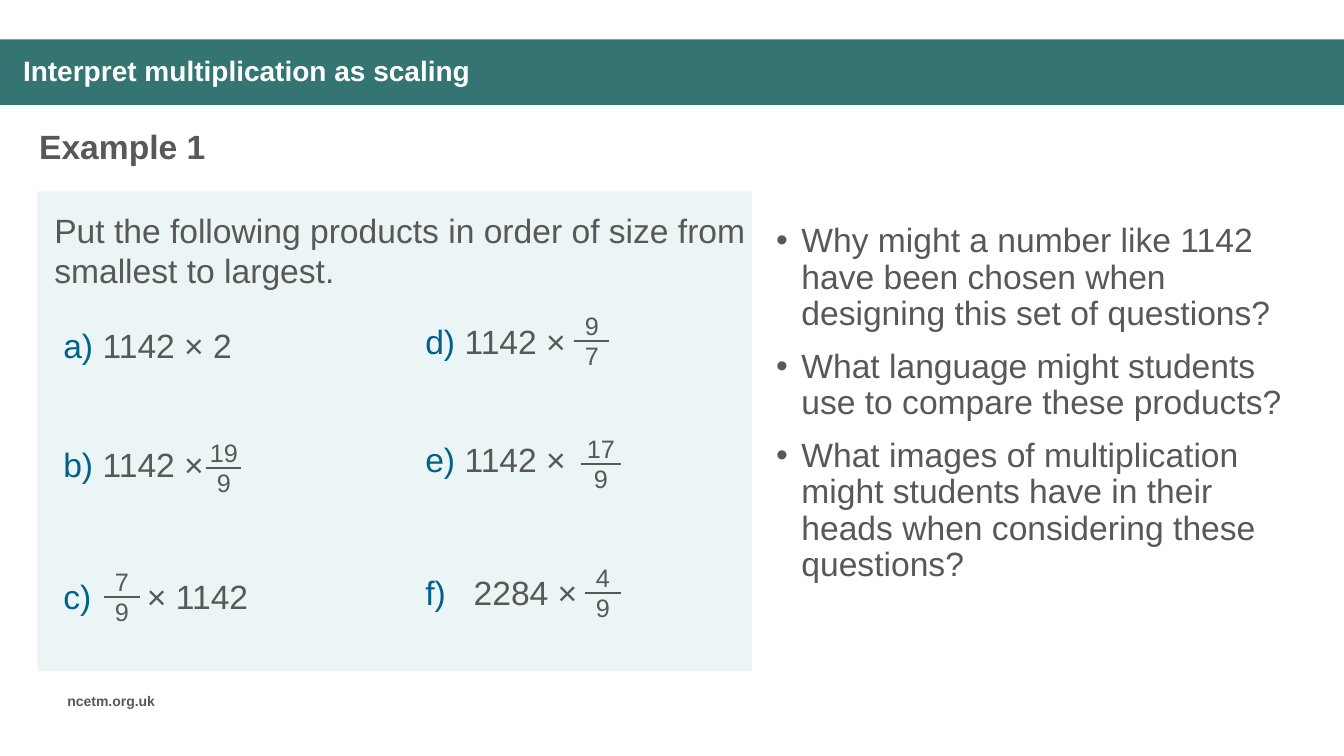
from lxml import etree
from pptx import Presentation, util as u
from pptx.dml.color import RGBColor
from pptx.enum import shapes, text
from pptx.oxml.ns import qn

TEAL, PALE, GREY, BLUE, WHITE = "347574", "EBF5F5", "585858", "00628C", "FFFFFF"
FONT = "Arial"

heading = "Interpret multiplication as scaling"
example = "Example 1"
website = "ncetm.org.uk"
task = "Put the following products in order of size from smallest to largest."
questions = [
    "Why might a number like 1142 have been chosen when designing this set of questions?",
    "What language might students use to compare these products?",
    "What images of multiplication might students have in their heads when considering these questions?",
]
# label, product, tab position, fraction (top, bottom, bar centre x, bar y, bar width)
columns = [
    (0.53, 0, [
        ("a)", "1142 × 2", 0.39, None),
        ("b)", "1142 ×", 0.39, ("19", "9", 2.22, 4.64, 0.35)),
        ("c)", "× 1142", 0.83, ("7", "9", 1.21, 5.92, 0.35)),
    ]),
    (4.12, -0.04, [
        ("d)", "1142 ×", 0.39, ("9", "7", 5.87, 3.38, 0.35)),
        ("e)", "1142 ×", 0.39, ("17", "9", 5.96, 4.6, 0.4)),
        ("f)", "2284 ×", 0.48, ("4", "9", 5.98, 5.88, 0.35)),
    ]),
]
row_tops = [3.17, 4.35, 5.66]
FRACTION_W, FRACTION_H = 0.48, 0.71

deck = Presentation()
deck.slide_width, deck.slide_height = u.Inches(13.33), u.Inches(7.5)
slide = deck.slides.add_slide(deck.slide_layouts[6])


def colour(value):
    return RGBColor.from_string(value)


def style(run, size, hue, bold=False):
    run.font.name, run.font.size, run.font.bold = FONT, u.Pt(size), bold
    run.font.color.rgb = colour(hue)


def panel(left, top, width, height, hue):
    block = slide.shapes.add_shape(
        shapes.MSO_SHAPE.RECTANGLE, *map(u.Inches, (left, top, width, height)))
    block.shadow.inherit = False
    block.fill.solid()
    block.fill.fore_color.rgb = colour(hue)
    block.line.fill.background()


def write(lines, left, top, width, height, size=24, hue=GREY, bold=False, wrap=True):
    frame = slide.shapes.add_textbox(
        *map(u.Inches, (left, top, width, height))).text_frame
    frame.word_wrap = wrap
    frame.text = "\n".join(lines)
    for paragraph in frame.paragraphs:
        for run in paragraph.runs:
            style(run, size, hue, bold)
    return frame


def fraction(upper, lower, centre, bar_y, bar_width):
    frame = write([upper, lower], centre - FRACTION_W / 2, bar_y - FRACTION_H / 2,
                  FRACTION_W, FRACTION_H, 18, wrap=False)
    for paragraph in frame.paragraphs:
        paragraph.alignment = text.PP_ALIGN.CENTER
    bar = slide.shapes.add_connector(
        shapes.MSO_CONNECTOR.STRAIGHT,
        *map(u.Inches, (centre - bar_width / 2, bar_y, centre + bar_width / 2, bar_y)))
    bar.line.color.rgb, bar.line.width = colour(GREY), u.Pt(1.5)
    etree.SubElement(bar._element.spPr, qn("a:effectLst"))


def product(label, expression, tab, left, top):
    paragraph = write([label], left, top, 2.83, 0.5, hue=BLUE).paragraphs[0]
    stops = etree.SubElement(paragraph._p.get_or_add_pPr(), qn("a:tabLst"))
    etree.SubElement(stops, qn("a:tab"), pos=str(u.Inches(tab)), algn="l")
    run = paragraph.add_run()
    run.text = "\t" + expression
    style(run, 24, GREY)


panel(0, 0.39, 13.33, 0.65, TEAL)
write([website], 0.57, 6.82, 1.21, 0.27, 10, bold=True)
banner = write([heading], 0.13, 0.48, 12.32, 0.47, 20, WHITE, True)
banner.vertical_anchor = text.MSO_ANCHOR.MIDDLE
banner.paragraphs[0].line_spacing = 0.9
write([example], 0.29, 1.2, 6.66, 0.5, bold=True)

prompts = write(questions, 7.46, 1.9, 5.35, 4.21)
prompts.vertical_anchor = text.MSO_ANCHOR.MIDDLE
for prompt in prompts.paragraphs:
    prompt.line_spacing, prompt.space_after = 0.9, u.Pt(12)
    props = prompt._p.get_or_add_pPr()
    props.set("marL", str(u.Inches(0.39)))
    props.set("indent", str(u.Inches(-0.25)))
    etree.SubElement(props, qn("a:buFont"), typeface=FONT)
    etree.SubElement(props, qn("a:buChar"), char="•")

panel(0.37, 1.9, 7.09, 4.76, PALE)
write([task], 0.44, 2.03, 7.17, 0.91)
for left, shift, items in columns:
    for top, (label, expression, tab, parts) in zip(row_tops, items):
        product(label, expression, tab, left, top + shift)
        if parts:
            fraction(*parts)

deck.save("out.pptx")
